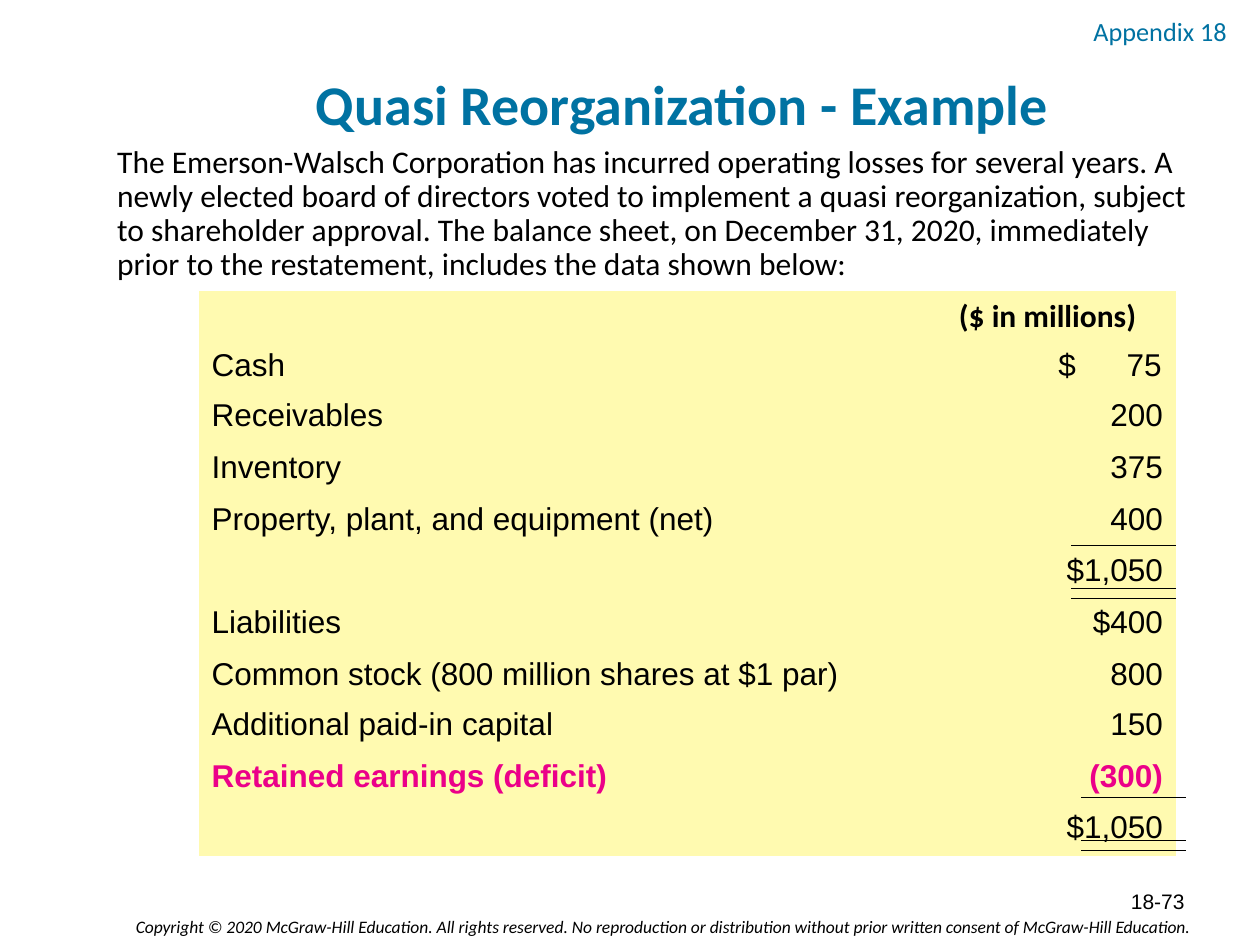
from lxml import etree
from pptx import Presentation
from pptx.dml.color import RGBColor
from pptx.enum.shapes import MSO_CONNECTOR
from pptx.enum.text import MSO_ANCHOR, MSO_AUTO_SIZE, PP_ALIGN
from pptx.oxml.ns import qn
from pptx.util import Inches, Pt

LEFT, CENTER, RIGHT = PP_ALIGN.LEFT, PP_ALIGN.CENTER, PP_ALIGN.RIGHT
TOP, MIDDLE = MSO_ANCHOR.TOP, MSO_ANCHOR.MIDDLE
STRAIGHT = MSO_CONNECTOR.STRAIGHT
NO_AUTOFIT = MSO_AUTO_SIZE.NONE
NO_STYLE = "{2D5ABB26-0587-4C30-8999-92F81FD0307C}"
COLORS = {"text": "000000", "accent": "0072A2", "deficit": "EB0089", "cell": "FFFAB0"}

BALANCES = [
    ("Cash", "$\t75"),
    ("Receivables", "200"),
    ("Inventory", "375"),
    ("Property, plant, and equipment (net)", "400"),
    ("", "$1,050"),
    ("Liabilities", "$400"),
    ("Common stock (800 million shares at $1 par)", "800"),
    ("Additional paid-in capital", "150"),
    ("Retained earnings (deficit)", "(300)"),
    ("", "$1,050"),
]
ROW_HEIGHTS = [0.38, 0.38] + [0.41] * 5 + [0.38] + [0.41] * 3


def rgb(name):
    return RGBColor.from_string(COLORS[name])


def write(tf, text, size=18, font="Calibri", color="text", bold=False,
          italic=False, align=LEFT, spacing=None):
    p = tf.paragraphs[0]
    p.alignment = align
    p.space_before = Pt(0)
    if spacing:
        p.line_spacing = spacing
    r = p.add_run()
    r.text = text
    r.font.size = Pt(size)
    r.font.name = font
    r.font.bold = bold
    r.font.italic = italic
    r.font.color.rgb = rgb(color)
    return p


class SlideBuilder:
    def __init__(self, prs):
        self.slide = prs.slides.add_slide(prs.slide_layouts[1])

    def placeholder(self, index, box, text, anchor=TOP, **style):
        sp = self.slide.placeholders[index]
        sp.left, sp.top, sp.width, sp.height = map(Inches, box)
        tf = sp.text_frame
        tf.auto_size = NO_AUTOFIT
        tf.vertical_anchor = anchor
        p_pr = write(tf, text, **style).runs[0].font  # run fonts follow the style
        p_pr = tf.paragraphs[0]._p.get_or_add_pPr()
        p_pr.set("marL", "0")
        p_pr.set("indent", "0")
        etree.SubElement(p_pr, qn("a:buNone"))

    def text(self, box, text, anchor=TOP, **style):
        sp = self.slide.shapes.add_textbox(*map(Inches, box))
        tf = sp.text_frame
        tf.word_wrap = True
        tf.vertical_anchor = anchor
        write(tf, text, **style)

    def rule(self, x, y, width=0.83):
        line = self.slide.shapes.add_connector(
            STRAIGHT, Inches(x), Inches(y), Inches(x + width), Inches(y))
        line.line.color.rgb = rgb("text")
        line.line.width = Pt(0.5)
        etree.SubElement(line.element.spPr, qn("a:effectLst"))

    def total_rules(self, x, y):
        for offset in (0, 0.34, 0.42):
            self.rule(x, y + offset)

    def amount_with_tab(self, cell, text):
        """Currency sign at the left, figure at a right tab."""
        cell.margin_left = Inches(1.1)
        p_pr = cell.text_frame.paragraphs[0]._p.get_or_add_pPr()
        tabs = etree.SubElement(p_pr, qn("a:tabLst"))
        etree.SubElement(tabs, qn("a:tab"), pos=str(Inches(0.82)), algn="r")
        write(cell.text_frame, text, font="Arial")

    def balance_table(self, box, widths):
        frame = self.slide.shapes.add_table(
            len(ROW_HEIGHTS), len(widths), *map(Inches, box))
        table = frame.table
        table.first_row = table.horz_banding = False
        next(frame.element.iter(qn("a:tableStyleId"))).text = NO_STYLE
        for column, width in zip(table.columns, widths):
            column.width = Inches(width)
        for row, height in zip(table.rows, ROW_HEIGHTS):
            row.height = Inches(height)
        for cell in table.iter_cells():
            cell.fill.solid()
            cell.fill.fore_color.rgb = rgb("cell")

        write(table.cell(0, 1).text_frame, "($ in millions)", bold=True, align=CENTER)
        for i, (label, amount) in enumerate(BALANCES, start=1):
            deficit = "deficit" in label
            style = {"font": "Arial", "bold": deficit,
                     "color": "deficit" if deficit else "text"}
            if label:
                write(table.cell(i, 0).text_frame, label, **style)
            if "\t" in amount:
                self.amount_with_tab(table.cell(i, 1), amount)
            else:
                write(table.cell(i, 1).text_frame, amount, align=RIGHT, **style)


def main():
    prs = Presentation()
    prs.slide_width, prs.slide_height = Inches(10), Inches(7.5)
    s = SlideBuilder(prs)

    # Heading and introduction
    s.text((8.58, 0.07, 2.35, 0.35), "Appendix 18", size=15, color="accent")
    s.placeholder(0, (0.83, 0, 9.17, 1.58), "Quasi Reorganization - Example",
                  anchor=MIDDLE, size=32, color="accent", bold=True,
                  align=CENTER, spacing=1.1)
    s.placeholder(1, (0.83, 1.11, 8.76, 1.75),
                  "The Emerson-Walsch Corporation has incurred operating losses for "
                  "several years. A newly elected board of directors voted to implement "
                  "a quasi reorganization, subject to shareholder approval. The balance "
                  "sheet, on December 31, 2020, immediately prior to the restatement, "
                  "includes the data shown below:", spacing=0.9)

    # Balance sheet with total rules
    s.balance_table((1.58, 2.31, 7.75, 4.42), (5.72, 2.03))
    s.total_rules(8.5, 4.33)
    s.total_rules(8.58, 6.33)

    # Footer
    s.text((7.17, 6.95, 2.33, 0.4), "18-73", anchor=MIDDLE, size=12,
           font="Arial", align=RIGHT)
    s.text((0.45, 7.22, 9.09, 0.27),
           "Copyright © 2020 McGraw-Hill Education. All rights reserved. No "
           "reproduction or distribution without prior written consent of "
           "McGraw-Hill Education.", size=10, italic=True, align=RIGHT)
    prs.save("out.pptx")


if __name__ == "__main__":
    main()
